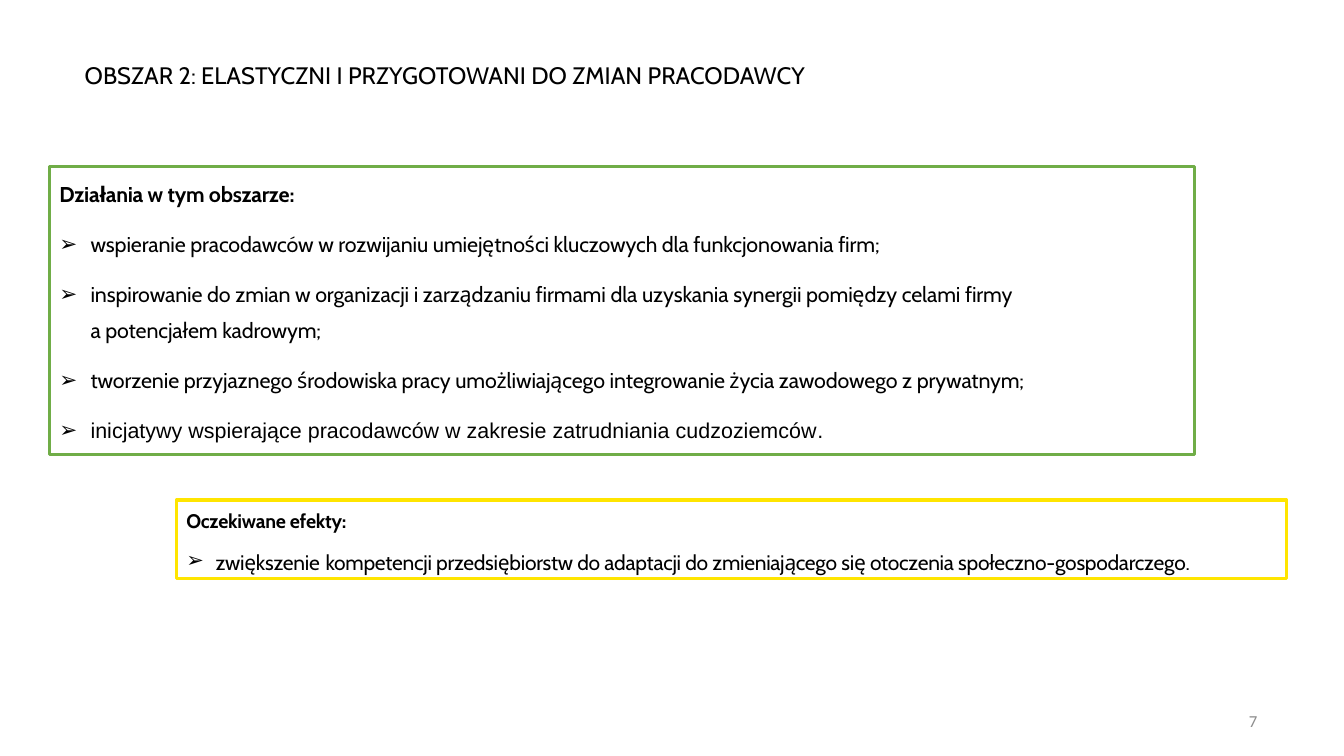
from lxml import etree
from pptx import Presentation
from pptx.dml.color import RGBColor
from pptx.enum.shapes import MSO_SHAPE
from pptx.enum.text import MSO_ANCHOR, MSO_AUTO_SIZE, PP_ALIGN
from pptx.oxml.ns import qn
from pptx.util import Inches, Pt

BLACK = RGBColor(0x00, 0x00, 0x00)
WHITE = RGBColor(0xFF, 0xFF, 0xFF)
GRAY = RGBColor(0x8C, 0x8C, 0x8C)
GREEN = RGBColor(0x70, 0xAD, 0x47)
YELLOW = RGBColor(0xFF, 0xE5, 0x00)
RECT = MSO_SHAPE.RECTANGLE
MIDDLE, TOP = MSO_ANCHOR.MIDDLE, MSO_ANCHOR.TOP
LEFT, RIGHT, JUSTIFY = PP_ALIGN.LEFT, PP_ALIGN.RIGHT, PP_ALIGN.JUSTIFY


def add_run(p, text, size, font="Cabin", color=BLACK, bold=False, spacing=0):
    """Add a run; spacing is the letter spacing in hundredths of a point."""
    r = p.add_run()
    r.text = text
    r.font.size = Pt(size)
    r.font.name = font
    r.font.bold = bold
    r.font.color.rgb = color
    if spacing:
        r._r.get_or_add_rPr().set("spc", str(spacing))


def set_bullet(p, indent):
    """Give the paragraph an arrow bullet with a hanging indent."""
    pPr = p._p.get_or_add_pPr()
    pPr.set("marL", str(Inches(indent)))
    pPr.set("indent", str(-Inches(indent)))
    etree.SubElement(pPr, qn("a:buFont")).set("typeface", "Arial")
    etree.SubElement(pPr, qn("a:buChar")).set("char", "➢")


prs = Presentation()
prs.slide_width, prs.slide_height = Inches(13.33), Inches(7.5)
s = prs.slides.add_slide(prs.slide_layouts[5])

# Title
title = s.shapes.title
title.left, title.top = Inches(0.74), Inches(0.15)
title.width, title.height = Inches(11.84), Inches(1.04)
tf = title.text_frame
tf.auto_size = MSO_AUTO_SIZE.NONE
tf.vertical_anchor = MIDDLE
p = tf.paragraphs[0]
p.alignment = LEFT
p.line_spacing = 1.5
add_run(p, "OBSZAR 2: ELASTYCZNI I PRZYGOTOWANI DO ZMIAN PRACODAWCY", 17)

# Frames
frames = []
for x, y, w, h, color in [
    (0.49, 1.65, 11.36, 2.86, GREEN),
    (1.75, 4.96, 11.01, 0.78, YELLOW),
]:
    sp = s.shapes.add_shape(RECT, Inches(x), Inches(y), Inches(w), Inches(h))
    sp.shadow.inherit = False
    sp.fill.solid()
    sp.fill.fore_color.rgb = WHITE
    sp.line.color.rgb = color
    sp.line.width = Pt(2.25)
    sp.text_frame.word_wrap = True
    sp.text_frame.vertical_anchor = TOP
    frames.append(sp.text_frame)
actions, effects = frames

# Actions: each bullet is a list of lines, each line a list of (text, font, spacing)
bullets = [
    [[("wspieranie pracodawców w rozwijaniu umiejętności kluczowych dla "
       "funkcjonowania firm;", "Cabin", -10)]],
    [[("inspirowanie do zmian w organizacji i zarządzaniu firmami dla uzyskania "
       "synergii pomiędzy celami firmy ", "Cabin", -10)],
     [("a potencjałem kadrowym;", "Cabin", -10)]],
    [[("tworzenie przyjaznego środowiska pracy umożliwiającego integrowanie życia "
       "zawodowego z prywatnym", "Cabin", -10), (";", "Cabin", -20)]],
    [[("inicjatywy wspierające pracodawców w zakresie zatrudniania cudzoziemców",
       "Arial", 0), (".", "Arial", -20)]],
]
p = actions.paragraphs[0]
p.alignment = LEFT
p.line_spacing = 1.4
add_run(p, "Działania w tym obszarze:", 15.3, bold=True, spacing=-20)
for lines in bullets:
    p = actions.add_paragraph()
    set_bullet(p, 0.31)
    p.alignment = LEFT
    p.line_spacing = 1.4
    p.space_before = Pt(10)
    for i, line in enumerate(lines):
        if i:
            p.add_line_break()
        for text, font, spacing in line:
            add_run(p, text, 15.3, font, spacing=spacing)

# Expected effects
p = effects.paragraphs[0]
p.alignment = JUSTIFY
p.line_spacing = 1.15
p.space_after = Pt(6)
add_run(p, "Oczekiwane efekty:", 14, bold=True, spacing=-20)
p = effects.add_paragraph()
set_bullet(p, 0.29)
p.alignment = JUSTIFY
p.line_spacing = 1.15
add_run(p, "zwiększenie", 15, spacing=-20)
add_run(p, " ", 18)
add_run(p, "kompetencji przedsiębiorstw do adaptacji do zmieniającego się otoczenia "
        "społeczno-gospodarczego.", 15, spacing=-20)

# Page number
tf = s.shapes.add_textbox(Inches(9.42), Inches(6.95), Inches(3.15), Inches(0.4)).text_frame
tf.word_wrap = True
tf.vertical_anchor = MIDDLE
p = tf.paragraphs[0]
p.alignment = RIGHT
add_run(p, "7", 12, "Calibri", GRAY)

prs.save("out.pptx")
